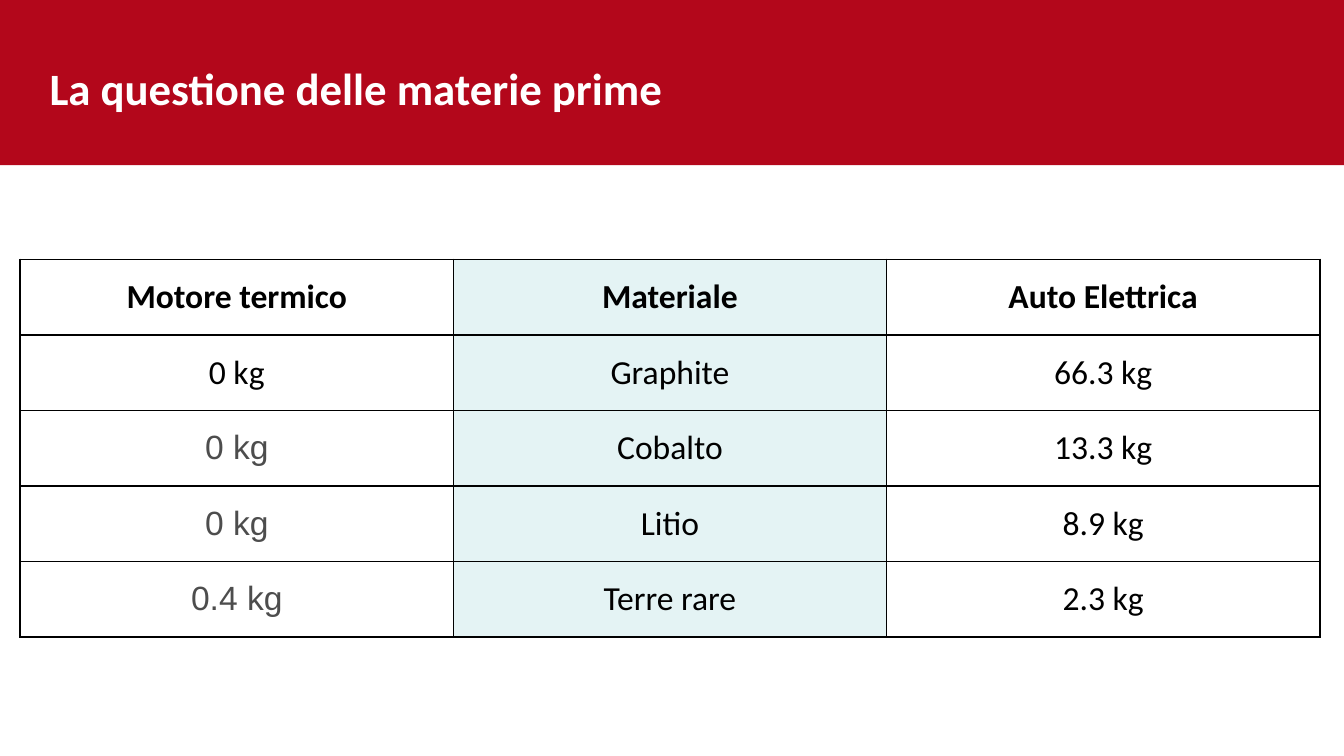
"""Build the slide on raw materials in combustion and electric cars."""
from lxml.etree import SubElement
from pptx import Presentation
from pptx.dml.color import RGBColor
from pptx.enum.shapes import MSO_SHAPE
from pptx.enum.text import MSO_ANCHOR, PP_ALIGN
from pptx.oxml.ns import qn
from pptx.util import Inches, Pt

HUES = {"red": "B3071B", "white": "FFFFFF", "black": "000000",
        "gray": "4D4D4D", "mint": "E4F3F4"}
ROWS = [
    ("Motore termico", "Materiale", "Auto Elettrica"),
    ("0 kg", "Graphite", "66.3 kg"),
    ("0 kg", "Cobalto", "13.3 kg"),
    ("0 kg", "Litio", "8.9 kg"),
    ("0.4 kg", "Terre rare", "2.3 kg"),
]


def style(font, hue, **form):
    for key, val in form.items():
        setattr(font, key, val)
    font.color.rgb = RGBColor.from_string(HUES[hue])


def frame(cell):
    props = cell._tc.get_or_add_tcPr()
    for spot, side in enumerate(("a:lnL", "a:lnR", "a:lnT", "a:lnB")):
        line = SubElement(props, qn(side), w=str(Pt(1)))
        fill = SubElement(line, qn("a:solidFill"))
        SubElement(fill, qn("a:srgbClr"), val=HUES["black"])
        props.insert(spot, line)


deck = Presentation()
deck.slide_width = Inches(10)
deck.slide_height = deck.slide_width * 9 // 16
slide = deck.slides.add_slide(deck.slide_layouts[6])

band = slide.shapes.add_shape(
    MSO_SHAPE.RECTANGLE, 0, 0, Inches(10.01), Inches(1.23))
band.shadow.inherit = False
band.fill.solid()
band.fill.fore_color.rgb = RGBColor.from_string(HUES["red"])
band.line.fill.background()

title = slide.shapes.add_textbox(
    Inches(0.27), Inches(0.4), Inches(6.68), Inches(0.5))
title.text_frame.word_wrap = True
title.text_frame.text = "La questione delle materie prime"
style(title.text_frame.paragraphs[0].runs[0].font, "white",
      name="Calibri", size=Pt(24), bold=True)

table = slide.shapes.add_table(
    len(ROWS), 3, Inches(0.15), Inches(1.93),
    Inches(9.67), Inches(2.81)).table
table.first_row = table.horz_banding = False
for r, row in enumerate(ROWS):
    for c, text in enumerate(row):
        cell = table.cell(r, c)
        cell.text = text
        cell.vertical_anchor = MSO_ANCHOR.MIDDLE
        if c == 1:
            cell.fill.solid()
            cell.fill.fore_color.rgb = RGBColor.from_string(HUES["mint"])
        else:
            cell.fill.background()
        frame(cell)
        para = cell.text_frame.paragraphs[0]
        para.alignment = PP_ALIGN.CENTER
        pale = c == 0 and r > 1
        style(para.runs[0].font, "gray" if pale else "black",
              name="Arial" if pale else "Calibri", size=Pt(18), bold=r == 0)

deck.save("out.pptx")
